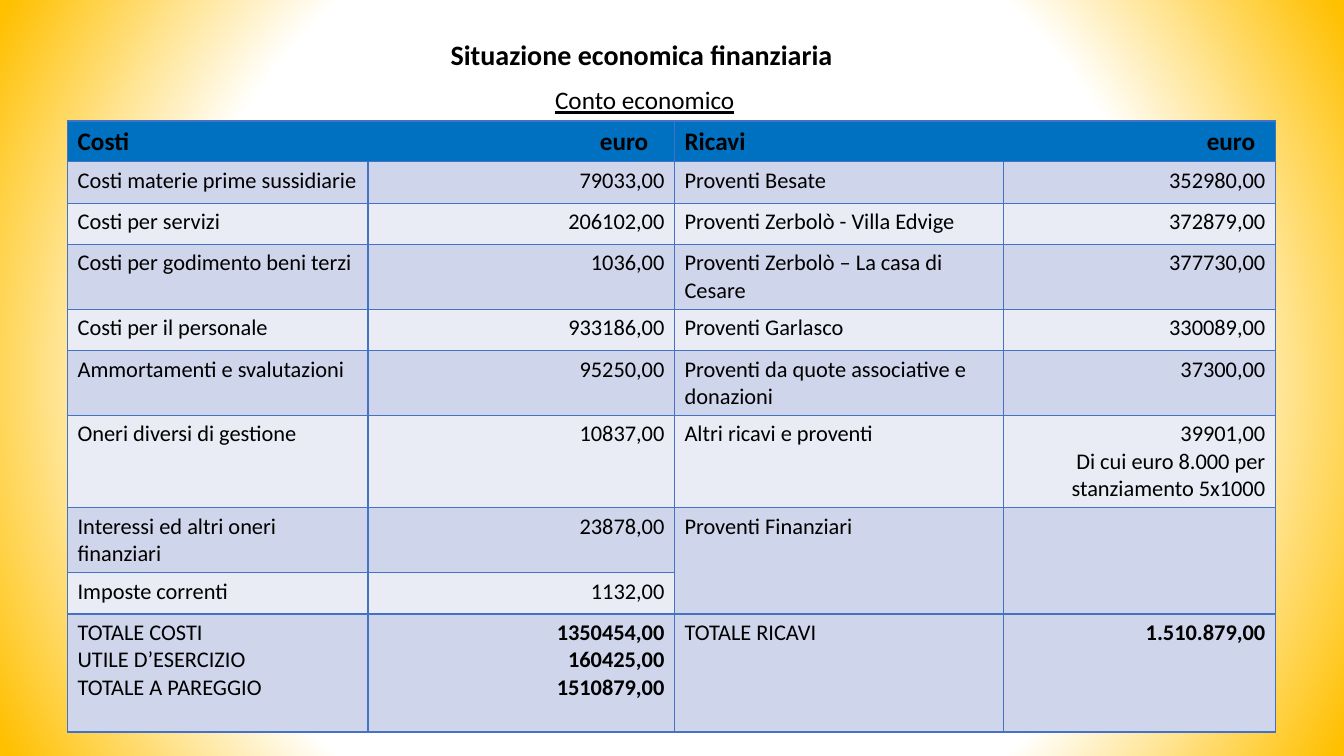
from dataclasses import dataclass

from lxml import etree
from pptx import Presentation
from pptx.dml.color import RGBColor
from pptx.enum.text import MSO_ANCHOR as Anchor, MSO_AUTO_SIZE as AutoSize, PP_ALIGN as Align
from pptx.oxml import parse_xml
from pptx.oxml.ns import qn
from pptx.util import Inches, Pt

# Content
TITLE = "Situazione economica finanziaria "
SUBTITLE = "Conto economico"
HEADINGS = ["Costi", "Ricavi"]
UNIT = "euro"
ENTRIES = [
    ("Costi materie prime sussidiarie", "79033,00", "Proventi Besate", "352980,00"),
    ("Costi per servizi", "206102,00", "Proventi Zerbolò - Villa Edvige", "372879,00"),
    ("Costi per godimento beni terzi", "1036,00",
     "Proventi Zerbolò – La casa di Cesare", "377730,00"),
    ("Costi per il personale", "933186,00", "Proventi Garlasco", "330089,00"),
    ("Ammortamenti e svalutazioni", "95250,00",
     "Proventi da quote associative e donazioni", "37300,00"),
    ("Oneri diversi di gestione", "10837,00", "Altri ricavi e proventi",
     "39901,00\nDi cui euro 8.000 per stanziamento 5x1000"),
    ("Interessi ed altri oneri finanziari", "23878,00", "Proventi Finanziari", ""),
    ("Imposte correnti", "1132,00", "", ""),
    ("TOTALE COSTI\nUTILE D’ESERCIZIO\nTOTALE A PAREGGIO",
     "1350454,00\n160425,00\n1510879,00", "TOTALE RICAVI", "1.510.879,00"),
]
COLUMN_WIDTHS = [2.98, 3.04, 3.26, 2.7]
ROW_HEIGHTS = [0.4, 0.41, 0.41, 0.63, 0.41, 0.63, 0.9, 0.63, 0.41, 1.17]
UNIT_TAB = 5.66
FINANCIAL_ROW = 7  # its income cells run down over the next row
TOTAL_ROW = len(ENTRIES)


@dataclass(frozen=True)
class Theme:
    font: str = "Calibri"
    ink: str = "000000"
    header: str = "0070C0"
    odd_band: str = "CFD5EA"
    even_band: str = "E9EBF5"
    border: str = "4472C4"
    glow: str = "FFC000"
    centre: str = "FFFFFF"
    title_size: int = 20
    heading_size: int = 18
    body_size: int = 16


theme = Theme()
A_NS = 'xmlns:a="http://schemas.openxmlformats.org/drawingml/2006/main"'


def add_run(paragraph, text, size, bold=False, underline=False):
    run = paragraph.add_run()
    run.text = text
    font = run.font
    font.name, font.size = theme.font, Pt(size)
    font.bold, font.underline = bold, underline
    font.color.rgb = RGBColor.from_string(theme.ink)


def style_cell(cell, color):
    cell.fill.solid()
    cell.fill.fore_color.rgb = RGBColor.from_string(color)
    properties = cell._tc.get_or_add_tcPr()
    for place, side in enumerate("LRTB"):
        properties.insert(place, parse_xml(
            f'<a:ln{side} {A_NS} w="12700"><a:solidFill>'
            f'<a:srgbClr val="{theme.border}"/></a:solidFill></a:ln{side}>'))


def set_background(slide):
    stops = "".join(
        f'<a:gs pos="{percent * 1000}"><a:srgbClr val="{color}"/></a:gs>'
        for percent, color in [(0, theme.centre), (65, theme.centre), (99, theme.glow)])
    fill = slide.background.fill
    fill.solid()
    properties = slide._element.cSld.find(qn("p:bg")).find(qn("p:bgPr"))
    properties.replace(properties[0], parse_xml(
        f'<a:gradFill {A_NS} rotWithShape="1"><a:gsLst>{stops}</a:gsLst>'
        '<a:path path="circle"><a:fillToRect l="50000" t="50000" r="50000" b="50000"/>'
        '</a:path></a:gradFill>'))


def add_title(slide):
    title = slide.shapes.title
    title.left, title.top = Inches(1.01), Inches(0.32)
    title.width, title.height = Inches(10.77), Inches(0.88)
    frame = title.text_frame
    frame.word_wrap, frame.auto_size = True, AutoSize.NONE
    frame.vertical_anchor = Anchor.TOP
    heading, subheading = frame.paragraphs[0], frame.add_paragraph()
    for paragraph in (heading, subheading):
        paragraph.alignment, paragraph.line_spacing = Align.CENTER, 1.0
    subheading.space_before = Pt(9.8)
    add_run(heading, TITLE, theme.title_size, bold=True)
    add_run(subheading, SUBTITLE, theme.heading_size, underline=True)


def add_accounts(slide):
    accounts = slide.shapes.add_table(
        len(ROW_HEIGHTS), len(COLUMN_WIDTHS), Inches(0.67), Inches(1.2),
        Inches(sum(COLUMN_WIDTHS)), Inches(sum(ROW_HEIGHTS))).table
    for column, width in zip(accounts.columns, COLUMN_WIDTHS):
        column.width = Inches(width)
    for row, height in zip(accounts.rows, ROW_HEIGHTS):
        row.height = Inches(height)

    # Fills and borders, banded by row
    for r in range(len(ROW_HEIGHTS)):
        band = theme.odd_band if r % 2 else theme.even_band
        for c in range(len(COLUMN_WIDTHS)):
            style_cell(accounts.cell(r, c), theme.header if r == 0 else band)

    # Headings, with the unit on a right tab
    for side, heading in enumerate(HEADINGS):
        cell = accounts.cell(0, 2 * side)
        cell.merge(accounts.cell(0, 2 * side + 1))
        paragraph = cell.text_frame.paragraphs[0]
        tabs = etree.SubElement(paragraph._p.get_or_add_pPr(), qn("a:tabLst"))
        etree.SubElement(tabs, qn("a:tab"), pos=str(Inches(UNIT_TAB)), algn="r")
        add_run(paragraph, f"{heading}\t{UNIT}", theme.heading_size, bold=True)

    # Entries: labels left, amounts right, total amounts bold
    for r, entry in enumerate(ENTRIES, start=1):
        for c, text in enumerate(entry):
            is_amount = c % 2 == 1
            frame = accounts.cell(r, c).text_frame
            for n, line in enumerate(text.split("\n") if text else []):
                paragraph = frame.add_paragraph() if n else frame.paragraphs[0]
                paragraph.alignment = Align.RIGHT if is_amount else Align.LEFT
                add_run(paragraph, line, theme.body_size,
                        bold=is_amount and r == TOTAL_ROW)
    for c in (2, 3):
        accounts.cell(FINANCIAL_ROW, c).merge(accounts.cell(FINANCIAL_ROW + 1, c))

    # The total row has the same tint as the odd rows
    assert TOTAL_ROW % 2 == 1


def main():
    deck = Presentation()
    deck.slide_width, deck.slide_height = Inches(13.33), Inches(7.5)
    slide = deck.slides.add_slide(deck.slide_layouts[5])
    set_background(slide)
    add_title(slide)
    add_accounts(slide)
    deck.save("out.pptx")


if __name__ == "__main__":
    main()
